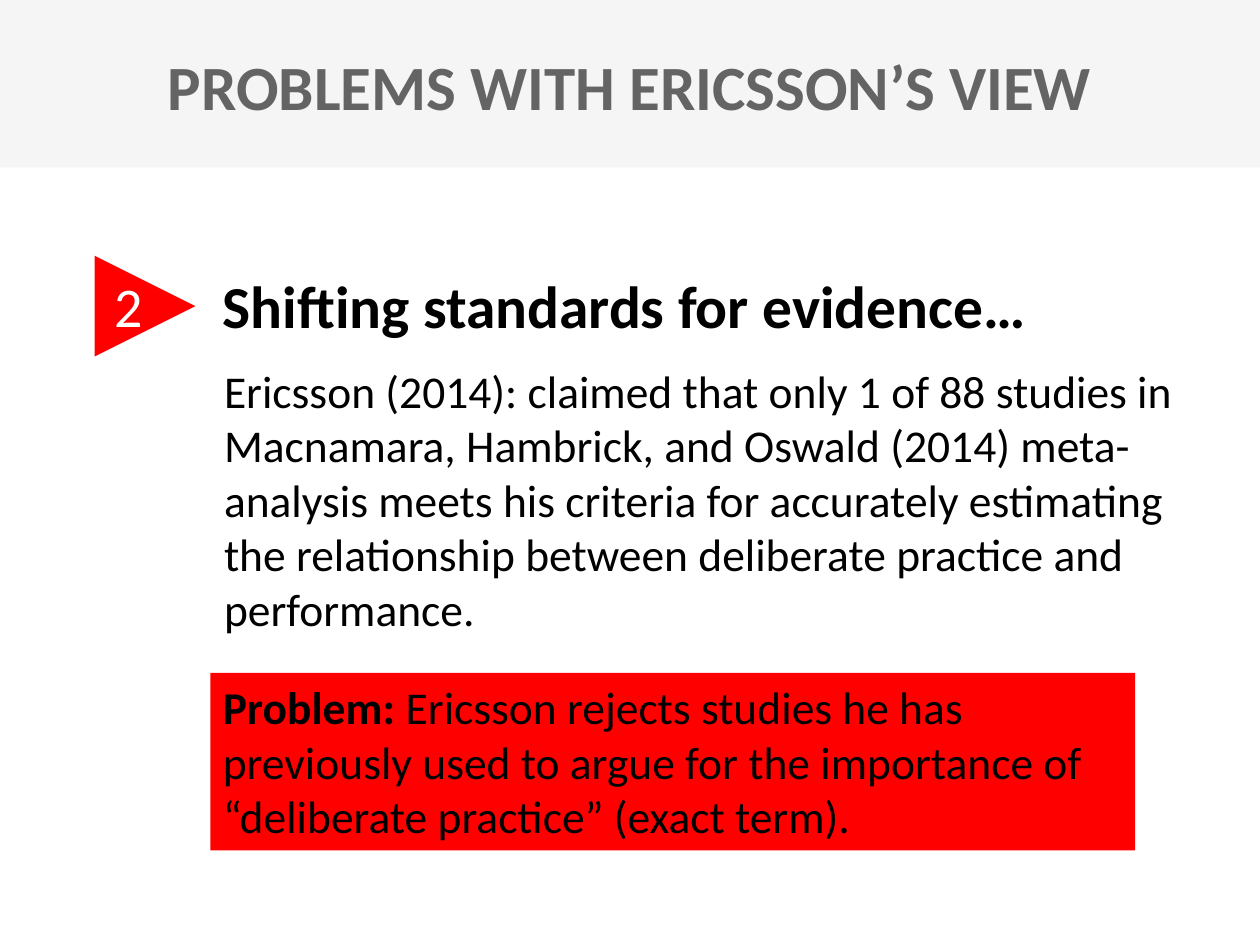
from dataclasses import dataclass

from pptx import Presentation
from pptx.dml.color import RGBColor
from pptx.enum.shapes import MSO_SHAPE
from pptx.enum.text import MSO_ANCHOR, PP_ALIGN
from pptx.util import Inches, Pt

RECT = MSO_SHAPE.RECTANGLE
WEDGE = MSO_SHAPE.ISOSCELES_TRIANGLE
LEFT, CENTER = PP_ALIGN.LEFT, PP_ALIGN.CENTER
TOP, MIDDLE = MSO_ANCHOR.TOP, MSO_ANCHOR.MIDDLE


@dataclass(frozen=True)
class Theme:
    face: str = "Calibri"
    band: str = "F5F5F5"
    title: str = "646464"
    ink: str = "000000"
    light: str = "FFFFFF"
    alert: str = "FF0000"
    title_size: int = 36
    head_size: int = 34
    mark_size: int = 32
    body_size: int = 26


class Painter:
    def __init__(self, slide, theme):
        self.slide = slide
        self.theme = theme

    def shape(self, kind, box, fill, turn=0):
        shape = self.slide.shapes.add_shape(kind, *map(Inches, box))
        shape.shadow.inherit = False
        shape.fill.solid()
        shape.fill.fore_color.rgb = RGBColor.from_string(fill)
        shape.line.fill.background()
        shape.rotation = turn
        return shape

    def letter(self, shape, runs, size, color, bold=None, align=LEFT, anchor=TOP):
        """Fill a shape with one paragraph; runs are (text, bold) pairs."""
        frame = shape.text_frame
        frame.word_wrap = True
        frame.vertical_anchor = anchor
        para = frame.paragraphs[0]
        para.alignment = align
        font = para.font
        font.name, font.size, font.bold = self.theme.face, Pt(size), bold
        font.color.rgb = RGBColor.from_string(color)
        for text, heavy in runs:
            run = para.add_run()
            run.text = text
            if heavy is not None:
                run.font.bold = heavy

    def text(self, box, words, size, color, **style):
        label = self.slide.shapes.add_textbox(*map(Inches, box))
        self.letter(label, [(words, None)], size, color, **style)


def main():
    deck = Presentation()
    deck.slide_width, deck.slide_height = Inches(10), Inches(7.5)
    theme = Theme()
    paint = Painter(deck.slides.add_slide(deck.slide_layouts[6]), theme)

    paint.shape(RECT, (0, 0, 10, 1.33), theme.band)
    paint.text((0, 0.44, 10, 0.48), "PROBLEMS WITH ERICSSON’S VIEW",
               theme.title_size, theme.title, bold=True,
               align=CENTER, anchor=MIDDLE)

    paint.text((1.67, 2.09, 8, 0.67), "Shifting standards for evidence…",
               theme.head_size, theme.ink, bold=True)
    paint.shape(WEDGE, (0.75, 2.03, 0.8, 0.8), theme.alert, turn=90)
    paint.text((0.81, 2.11, 1.36, 0.64), "2", theme.mark_size, theme.light)

    paint.text((1.68, 2.83, 7.74, 2.29),
               "Ericsson (2014): claimed that only 1 of 88 studies in "
               "Macnamara, Hambrick, and Oswald (2014) meta-analysis meets "
               "his criteria for accurately estimating the relationship "
               "between deliberate practice and performance.",
               theme.body_size, theme.ink)

    problem = paint.shape(RECT, (1.67, 5.34, 7.34, 1.41), theme.alert)
    paint.letter(problem,
                 [("Problem:", True),
                  (" Ericsson rejects studies he has previously used to argue "
                   "for the importance of “deliberate practice” (exact term).",
                   None)],
                 theme.body_size, theme.ink)

    deck.save("out.pptx")


if __name__ == "__main__":
    main()
